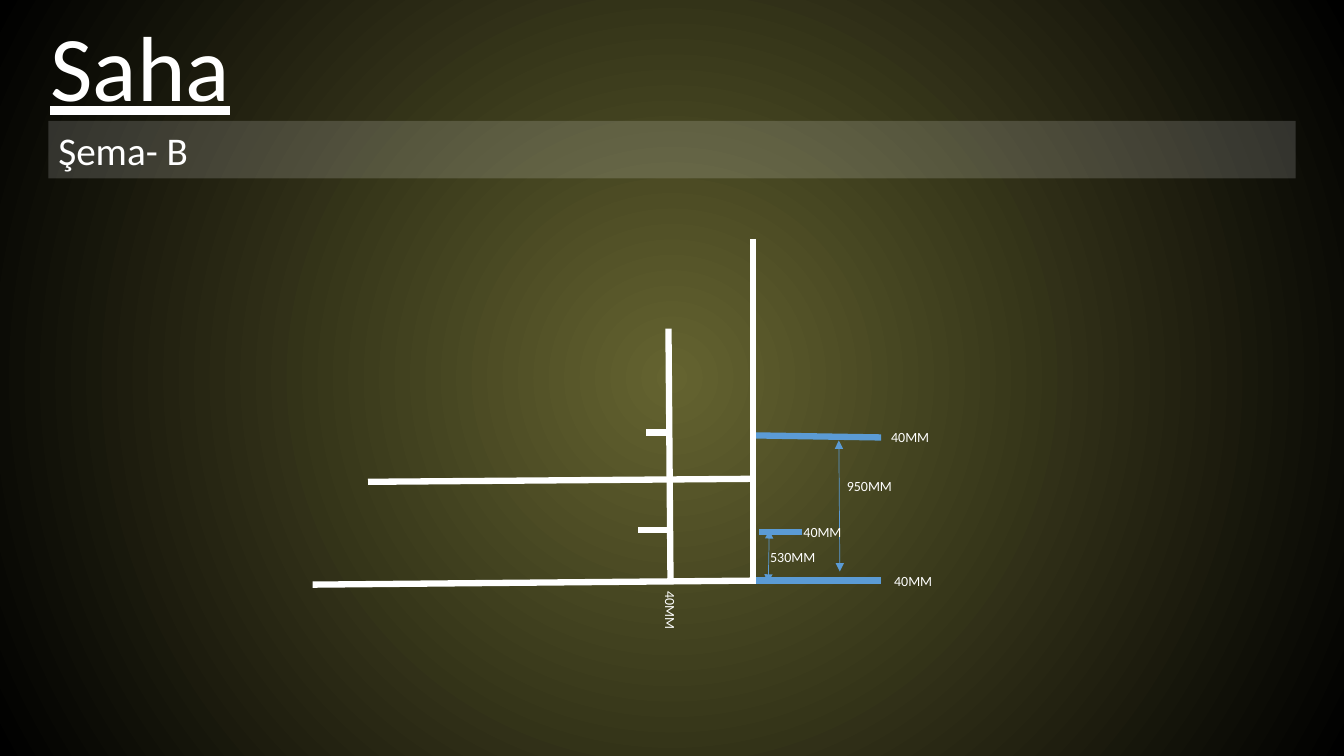
from lxml import etree
from pptx import Presentation
from pptx.dml.color import RGBColor
from pptx.enum.shapes import MSO_CONNECTOR, MSO_SHAPE
from pptx.enum.text import MSO_ANCHOR, MSO_AUTO_SIZE, PP_ALIGN
from pptx.oxml.ns import qn
from pptx.util import Inches, Pt

STRAIGHT = MSO_CONNECTOR.STRAIGHT
RECTANGLE = MSO_SHAPE.RECTANGLE
TOP, MIDDLE = MSO_ANCHOR.TOP, MSO_ANCHOR.MIDDLE
LEFT = PP_ALIGN.LEFT
NO_FIT = MSO_AUTO_SIZE.NONE

FONT = "Calibri"
COLORS = {"white": "FFFFFF", "blue": "5B9BD5", "olive": "646330", "black": "000000"}
TITLE_ONLY = 5

# Lines as x1, y1, x2, y2
PIPES = [
    (7.47, 2.37, 7.47, 5.76),
    (7.5, 5.76, 3.1, 5.8),
    (6.65, 5.76, 6.63, 3.26),
    (7.48, 4.75, 3.65, 4.78),
    (6.63, 5.26, 6.33, 5.26),
    (6.64, 4.29, 6.41, 4.29),
]
BRANCHES = [
    (7.5, 4.32, 8.74, 4.34),
    (7.53, 5.28, 7.95, 5.28),
    (7.5, 5.76, 8.74, 5.76),
]
DIMENSIONS = [(7.63, 5.26, 7.62, 5.78), (8.32, 4.37, 8.33, 5.67)]

# Labels as text, left, top, rotation
LABELS = [
    ("40MM", 7.87, 5.14, 0),
    ("40MM", 8.77, 5.63, 0),
    ("40MM", 6.09, 6.19, 90),
    ("950MM", 8.3, 4.69, 0),
    ("40MM", 8.74, 4.2, 0),
    ("530MM", 7.54, 5.39, 0),
]


def color(name):
    return RGBColor.from_string(COLORS[name])


def write(sp, text, size, anchor=TOP, underline=None):
    tf = sp.text_frame
    tf.word_wrap = True
    tf.auto_size = NO_FIT
    tf.vertical_anchor = anchor
    p = tf.paragraphs[0]
    p.alignment = LEFT
    r = p.add_run()
    r.text = text
    r.font.name = FONT
    r.font.size = Pt(size)
    r.font.underline = underline
    r.font.color.rgb = color("white")
    return p


def paint_background(s):
    fill = s.background.fill
    fill.gradient()
    for stop, name, position in zip(fill.gradient_stops, ("olive", "black"), (0, 1)):
        stop.color.rgb = color(name)
        stop.position = position
    # Radial gradient from the centre of the slide
    grad = s.element.xpath(".//p:bg//a:gradFill")[0]
    for linear in grad.findall(qn("a:lin")):
        grad.remove(linear)
    radial = etree.SubElement(grad, qn("a:path"), {"path": "circle"})
    etree.SubElement(radial, qn("a:fillToRect"), dict.fromkeys("ltrb", "50000"))


def add_title(s, text):
    sp = s.shapes.title
    sp.left, sp.top = Inches(0), Inches(0.04)
    sp.width, sp.height = Inches(13.33), Inches(1.21)
    p = write(sp, text, 66, underline=True)
    p._p.get_or_add_pPr().set("indent", str(Inches(0.4)))


def add_subtitle_bar(s, text):
    sp = s.shapes.add_shape(RECTANGLE, Inches(0.48), Inches(1.2), Inches(12.37), Inches(0.57))
    sp.shadow.inherit = False
    sp.fill.solid()
    sp.fill.fore_color.rgb = color("white")
    rgb = sp.fill._xPr.find(qn("a:solidFill")).find(qn("a:srgbClr"))
    etree.SubElement(rgb, qn("a:alpha"), val="16000")
    sp.line.fill.background()
    write(sp, text, 28, anchor=MIDDLE)


def add_line(s, ends, color_name, width, arrows=False):
    line = s.shapes.add_connector(STRAIGHT, *map(Inches, ends))
    line.line.color.rgb = color(color_name)
    line.line.width = Pt(width)
    if arrows:
        ln = line.line._get_or_add_ln()
        for end in ("a:headEnd", "a:tailEnd"):
            etree.SubElement(ln, qn(end), type="triangle")
    etree.SubElement(line._element.spPr, qn("a:effectLst"))


def add_label(s, text, left, top, rotation):
    sp = s.shapes.add_textbox(Inches(left), Inches(top), Inches(1.12), Inches(0.27))
    sp.rotation = rotation
    write(sp, text, 10)


def main():
    prs = Presentation()
    prs.slide_width, prs.slide_height = Inches(13.33), Inches(7.5)
    s = prs.slides.add_slide(prs.slide_layouts[TITLE_ONLY])
    paint_background(s)

    # Heading
    add_subtitle_bar(s, "Şema- B")
    add_title(s, "Saha")

    # Pipe diagram
    for ends in PIPES:
        add_line(s, ends, "white", 4.5)
    for ends in BRANCHES:
        add_line(s, ends, "blue", 4.5)
    for ends in DIMENSIONS:
        add_line(s, ends, "blue", 0.5, arrows=True)

    # Measurements
    for label in LABELS:
        add_label(s, *label)

    prs.save("out.pptx")


if __name__ == "__main__":
    main()
